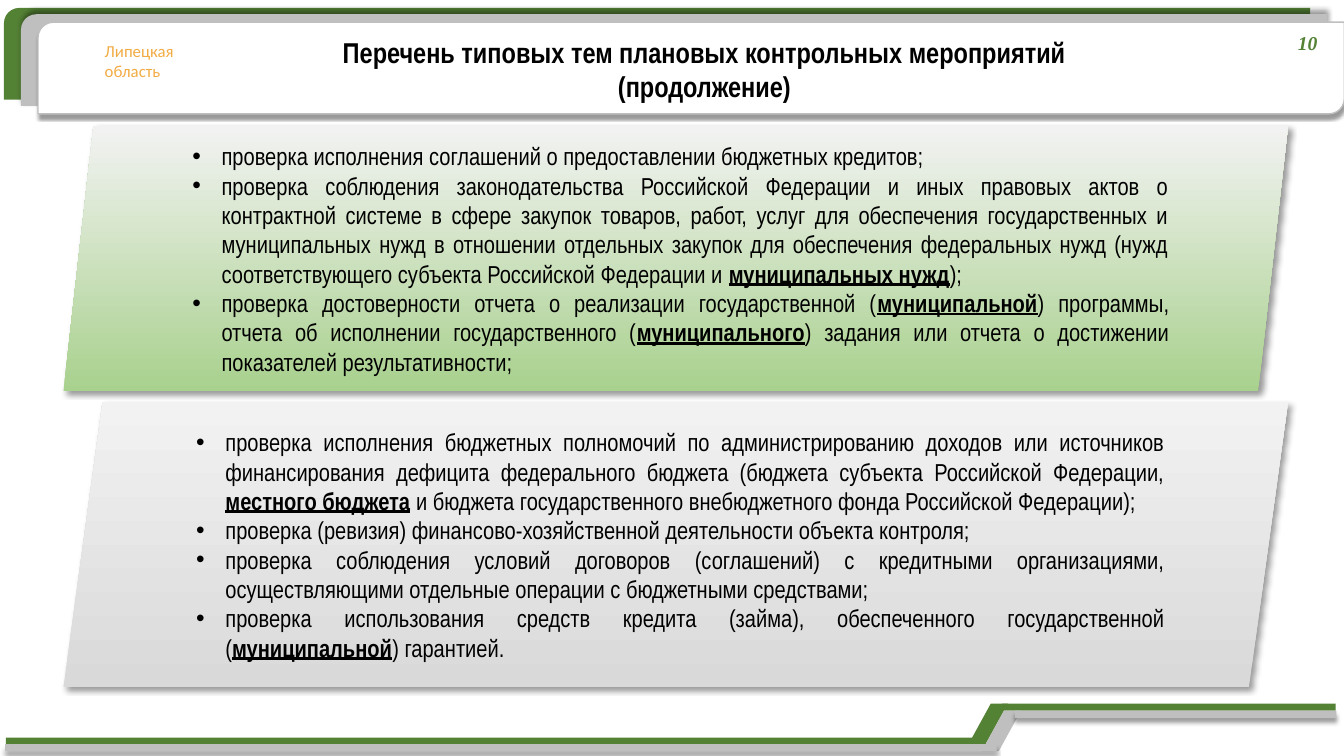
import lxml.etree
import pptx
import pptx.dml.color
import pptx.enum.shapes
import pptx.enum.text
import pptx.oxml.ns
import pptx.util

Cm = pptx.util.Cm
Pt = pptx.util.Pt
PRESET = pptx.enum.shapes.MSO_SHAPE
ALIGN = pptx.enum.text.PP_ALIGN
ANCHOR = pptx.enum.text.MSO_ANCHOR

GREEN, GREY, WHITE, BLACK = "548235", "BFBFBF", "FFFFFF", "000000"
BAR_HEIGHT = 0.18

TITLE = ["Перечень типовых тем плановых контрольных мероприятий", "(продолжение)"]
CONTRACT_TOPICS = [
    "проверка исполнения соглашений о предоставлении бюджетных кредитов;",
    "проверка соблюдения законодательства Российской Федерации и иных правовых актов о "
    "контрактной системе в сфере закупок товаров, работ, услуг для обеспечения "
    "государственных и муниципальных нужд в отношении отдельных закупок для обеспечения "
    "федеральных нужд (нужд соответствующего субъекта Российской Федерации и "
    "*муниципальных нужд*);",
    "проверка достоверности отчета о реализации государственной (*муниципальной*) "
    "программы, отчета об исполнении государственного (*муниципального*) задания или "
    "отчета о достижении показателей результативности;",
]
BUDGET_TOPICS = [
    "проверка исполнения бюджетных полномочий по администрированию доходов или источников "
    "финансирования дефицита федерального бюджета (бюджета субъекта Российской Федерации, "
    "*местного бюджета* и бюджета государственного внебюджетного фонда Российской "
    "Федерации);",
    "проверка (ревизия) финансово-хозяйственной деятельности объекта контроля;",
    "проверка соблюдения условий договоров (соглашений) с кредитными организациями, "
    "осуществляющими отдельные операции с бюджетными средствами;",
    "проверка использования средств кредита (займа), обеспеченного государственной "
    "(*муниципальной*) гарантией.",
]

TITLE_FONT = {"name": "Arial Narrow", "size": Pt(20.5), "bold": True, "italic": False}
REGION_FONT = {"name": "Calibri", "size": Pt(12)}
NUMBER_FONT = {"name": "Times New Roman", "size": Pt(14), "bold": True, "italic": True}
TOPIC_FONT = {"name": "Arial Narrow", "size": Pt(17.5)}
EMPHASIS = {"bold": True, "underline": True}


def rgb(value):
    return pptx.dml.color.RGBColor.from_string(value)


def apply(target, values):
    for name, value in values.items():
        setattr(target, name, value)


def add_xml(parent, tag, **attributes):
    return lxml.etree.SubElement(parent, pptx.oxml.ns.qn(tag), attributes)


def set_shadow(shape, blur, distance, angle):
    effects = shape.element.spPr.find(pptx.oxml.ns.qn("a:effectLst"))
    outer = add_xml(effects, "a:outerShdw", blurRad=str(Pt(blur)), dist=str(Pt(distance)),
                    dir=str(angle * 60000), algn="tl", rotWithShape="0")
    tint = add_xml(outer, "a:srgbClr", val=BLACK)
    add_xml(tint, "a:alpha", val="40000")


def finish(shape, fill, line=None, shadow=None):
    shape.shadow.inherit = False
    if isinstance(fill, str):
        shape.fill.solid()
        shape.fill.fore_color.rgb = rgb(fill)
    else:
        shape.fill.gradient()
        shape.fill.gradient_angle = 90
        for stop, color in zip(shape.fill.gradient_stops, fill):
            stop.color.rgb = rgb(color)
    if line:
        shape.line.color.rgb = rgb(line)
        shape.line.width = Pt(1)
    else:
        shape.line.fill.background()
    if shadow:
        set_shadow(shape, *shadow)


def add_block(slide, preset, box, fill, line=None, shadow=None):
    block = slide.shapes.add_shape(preset, *map(Cm, box))
    finish(block, fill, line, shadow)
    return block


def add_slant(slide, left, top, fill):
    corners = [(0, 1.02), (0.56, 0), (0.99, 0), (0.43, 1.02)]
    points = [(Cm(left + x), Cm(top + y)) for x, y in corners]
    builder = slide.shapes.build_freeform(*points[0])
    builder.add_line_segments(points[1:], close=True)
    finish(builder.convert_to_shape(), fill)


def add_runs(paragraph, text, font, color):
    for index, part in enumerate(text.split("*")):
        run = paragraph.add_run()
        run.text = part
        apply(run.font, {**font, **EMPHASIS} if index % 2 else font)
        run.font.color.rgb = rgb(color)


def write(frame, lines, font, color, align, bulleted=False):
    for index, line in enumerate(lines):
        paragraph = frame.add_paragraph() if index else frame.paragraphs[0]
        paragraph.alignment = align
        if bulleted:
            properties = paragraph._p.get_or_add_pPr()
            properties.set("marL", str(Cm(1)))
            properties.set("indent", str(-Cm(0.74)))
            add_xml(properties, "a:buFont", typeface="Arial")
            add_xml(properties, "a:buChar", char="•")
        add_runs(paragraph, line, font, color)


def add_label(slide, box, lines, font, color):
    label = slide.shapes.add_textbox(*map(Cm, box))
    label.text_frame.word_wrap = False
    write(label.text_frame, lines, font, color, ALIGN.LEFT)


def add_topics(slide, top, height, slope, fill, topics):
    panel = add_block(slide, PRESET.PARALLELOGRAM, (1.6, top, 30.86, height), fill,
                      shadow=(4, 3, 45))
    panel.adjustments[0] = slope
    frame = panel.text_frame
    margins = {f"margin_{side}": Cm(0.1) for side in ("left", "top", "right", "bottom")}
    apply(frame, {**margins, "word_wrap": True, "vertical_anchor": ANCHOR.MIDDLE})
    write(frame, topics, TOPIC_FONT, BLACK, ALIGN.JUSTIFY, bulleted=True)


def add_header(slide):
    plates = [
        (0.2, GREEN, None, None),
        (0.36, GREY, None, (4, 3, 270)),
        (0.56, WHITE, GREY, (2, 3, 90)),
    ]
    for index, (top, fill, line, shadow) in enumerate(plates):
        add_block(slide, PRESET.ROUND_2_DIAG_RECTANGLE,
                  (0.1 + 0.43 * index, top, 32.92, 2.31), fill, line, shadow)


def add_footer(slide):
    bands = [
        (GREEN, None, (24.41, 17.73), (0.15, 18.59, 24.69), (25.25, 17.73, 8.41)),
        (GREY, (3, 3, 90), (24.74, 17.91), (0.13, 18.75, 24.99), (25.58, 17.91, 8.1)),
    ]
    for fill, shadow, slant, *bars in bands:
        add_slant(slide, *slant, fill)
        for bar in bars:
            add_block(slide, PRESET.RECTANGLE, (*bar, BAR_HEIGHT), fill, shadow=shadow)


def set_title(slide):
    title = slide.shapes.title
    apply(title, {"left": Cm(5.36), "top": Cm(0.74), "width": Cm(24.79), "height": Cm(2.01)})
    apply(title.text_frame, {
        "word_wrap": True,
        "auto_size": pptx.enum.text.MSO_AUTO_SIZE.NONE,
        "vertical_anchor": ANCHOR.TOP,
    })
    write(title.text_frame, TITLE, TITLE_FONT, BLACK, ALIGN.CENTER)
    title.element.getparent().append(title.element)


def main():
    deck = pptx.Presentation()
    apply(deck, {"slide_width": Cm(33.87), "slide_height": Cm(19.05)})
    slide = deck.slides.add_slide(deck.slide_layouts.get_by_name("Title Only"))
    add_header(slide)
    add_label(slide, (2.39, 0.91, 2.31, 1.27), ["Липецкая", "область"], REGION_FONT, "F2AC44")
    add_footer(slide)
    set_title(slide)
    add_label(slide, (32.46, 0.66, 1.02, 0.86), ["10"], NUMBER_FONT, GREEN)
    add_topics(slide, 10.13, 7.19, 0.137, ("D9D9D9", "F2F2F2"), BUDGET_TOPICS)
    add_topics(slide, 3.18, 6.68, 0.113, ("A9D18E", "F2F2F2"), CONTRACT_TOPICS)
    deck.save("out.pptx")


if __name__ == "__main__":
    main()
